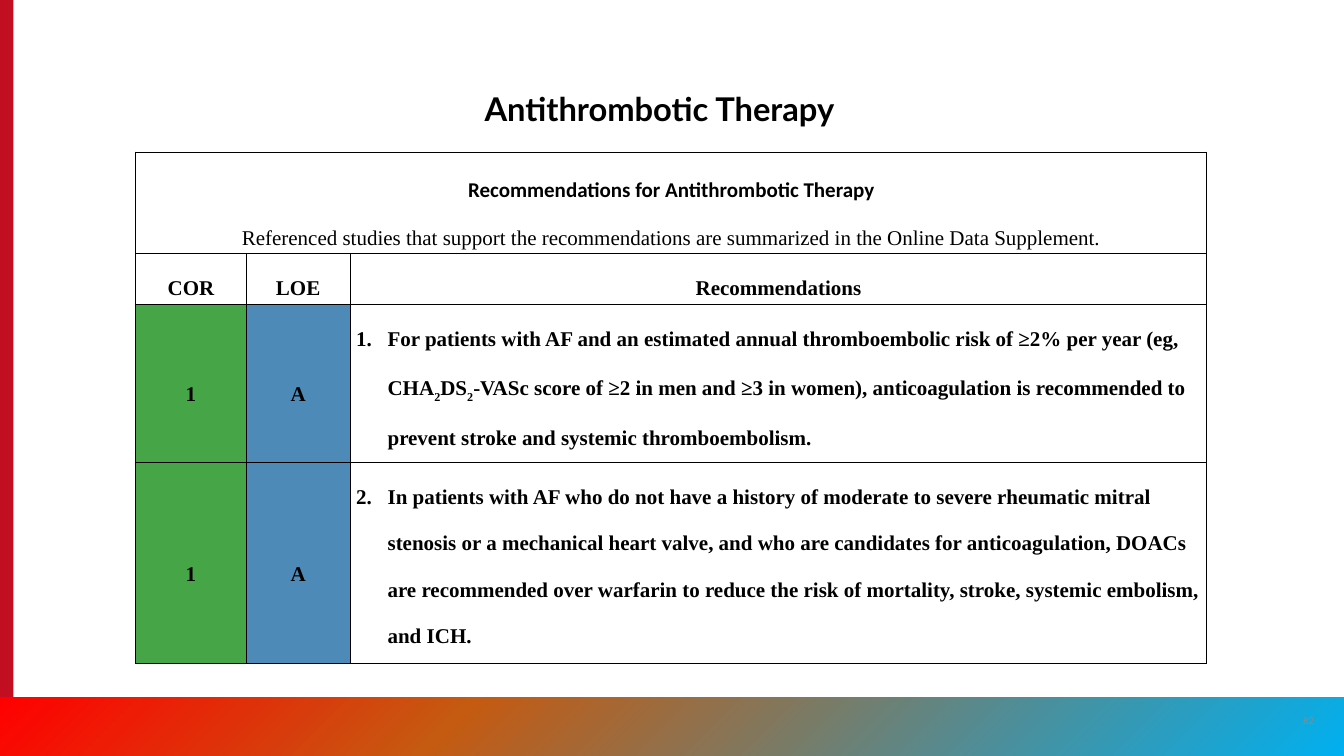
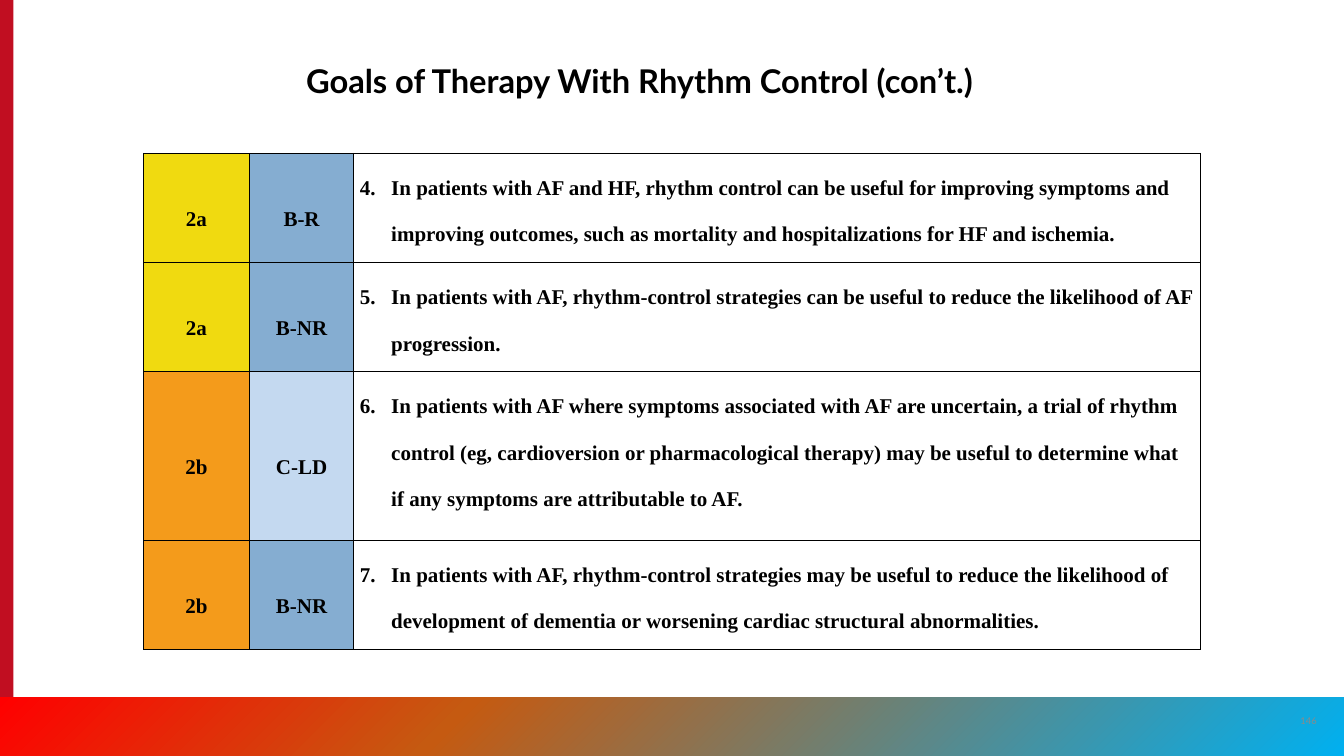
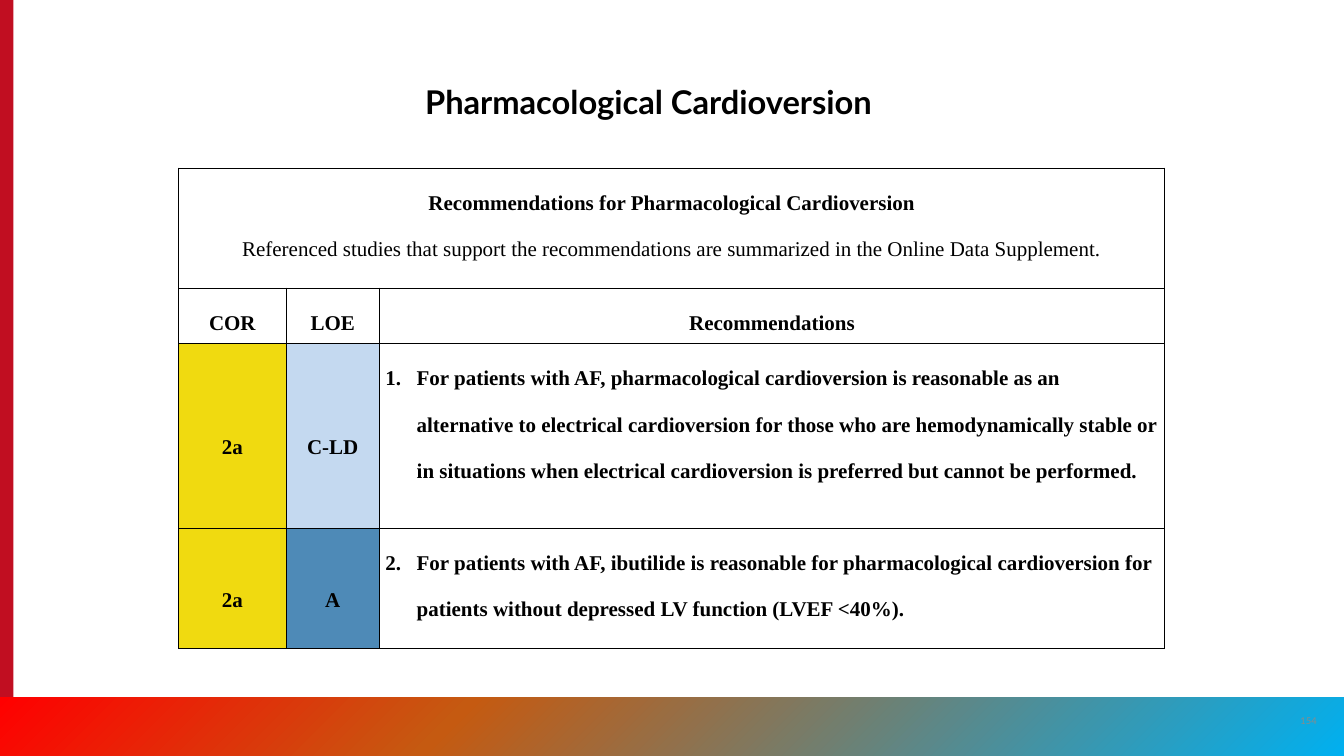
from copy import deepcopy
from dataclasses import dataclass

from lxml.etree import SubElement
from pptx import Presentation
from pptx.dml.color import RGBColor
from pptx.enum.shapes import MSO_SHAPE
from pptx.enum.text import MSO_ANCHOR, MSO_AUTO_SIZE, PP_ALIGN
from pptx.oxml.ns import qn
from pptx.util import Cm, Pt


@dataclass(frozen=True)
class Theme:
    ink: str = "000000"
    grey: str = "8A8B8A"
    stripe: str = "C10E21"
    band: tuple = ((0, "FF0000"), (0.34, "C55A11"), (1, "00B0F0"))
    sans: str = "Lato"
    serif: str = "Times New Roman"
    title: int = 28
    body: int = 18
    small: int = 8


theme = Theme()
GRADES = {
    "1": "45A547", "2a": "F0DA10", "2b": "F49B1B",
    "A": "4E8AB7", "B-R": "85ADD1", "B-NR": "85ADD1", "C-LD": "C4D9F0",
}
NOTE = ("Referenced studies that support the recommendations are "
        "summarized in the Online Data Supplement.")

# Boxes are left, top, width, height in centimetres; "_" encloses subscripts.
SLIDES = [
    dict(
        title="Antithrombotic Therapy", box=(14.4, 1.47, 11.86, 2.54), page="82",
        head="Recommendations for Antithrombotic Therapy", font="Calibri",
        spot=(4.11, 4.6), cols=(3.33, 3.15, 25.9), rows=(3.07, 1.42, 4.75, 5.61),
        start=1,
        items=[
            ("1", "A", "For patients with AF and an estimated annual thromboembolic "
             "risk of ≥2% per year (eg, CHA_2_DS_2_-VASc score of ≥2 in men and ≥3 in "
             "women), anticoagulation is recommended to prevent stroke and systemic "
             "thromboembolism."),
            ("1", "A", "In patients with AF who do not have a history of moderate to "
             "severe rheumatic mitral stenosis or a mechanical heart valve, and who "
             "are candidates for anticoagulation, DOACs are recommended over warfarin "
             "to reduce the risk of mortality, stroke, systemic embolism, and ICH."),
        ],
    ),
    dict(
        title="Goals of Therapy With Rhythm Control (con’t.)",
        box=(9, 1.9, 22.66, 1.27), page="146", head=None,
        spot=(4.34, 4.64), cols=(3.2, 3.16, 25.6), rows=(3.3, 3.3, 5.1, 3.3),
        start=4,
        items=[
            ("2a", "B-R", "In patients with AF and HF, rhythm control can be useful "
             "for improving symptoms and improving outcomes, such as mortality and "
             "hospitalizations for HF and ischemia."),
            ("2a", "B-NR", "In patients with AF, rhythm-control strategies can be "
             "useful to reduce the likelihood of AF progression."),
            ("2b", "C-LD", "In patients with AF where symptoms associated with AF are "
             "uncertain, a trial of rhythm control (eg, cardioversion or "
             "pharmacological therapy) may be useful to determine what if any "
             "symptoms are attributable to AF."),
            ("2b", "B-NR", "In patients with AF, rhythm-control strategies may be "
             "useful to reduce the likelihood of development of dementia or worsening "
             "cardiac structural abnormalities."),
        ],
    ),
    dict(
        title="Pharmacological Cardioversion", box=(12.6, 2.54, 15.44, 1.27),
        page="154", head="Recommendations for Pharmacological Cardioversion",
        font=theme.serif,
        spot=(5.4, 5.08), cols=(3.25, 2.82, 23.75), rows=(3.63, 1.68, 5.59, 3.63),
        start=1,
        items=[
            ("2a", "C-LD", "For patients with AF, pharmacological cardioversion is "
             "reasonable as an alternative to electrical cardioversion for those who "
             "are hemodynamically stable or in situations when electrical "
             "cardioversion is preferred but cannot be performed."),
            ("2a", "A", "For patients with AF, ibutilide is reasonable for "
             "pharmacological cardioversion for patients without depressed LV "
             "function (LVEF <40%)."),
        ],
    ),
]


def style(para, size, font, color=theme.ink, bold=True):
    for run in para.runs:
        run.font.size = Pt(size)
        run.font.name = font
        run.font.bold = bold
        run.font.color.rgb = RGBColor.from_string(color)


def fill_cell(cell, text, font=theme.serif, start=None):
    """Write and border a cell; a start number makes it a numbered item."""
    cell.margin_left = cell.margin_right = Cm(0.18)
    cell.margin_top = cell.margin_bottom = 0
    props = cell._tc.get_or_add_tcPr()
    for side in ("a:lnL", "a:lnR", "a:lnT", "a:lnB"):
        line = SubElement(props, qn(side), w=str(Pt(1)))
        paint = SubElement(line, qn("a:solidFill"))
        SubElement(paint, qn("a:srgbClr"), val=theme.ink)
    if text in GRADES:
        cell.fill.solid()
        cell.fill.fore_color.rgb = RGBColor.from_string(GRADES[text])
        cell.vertical_anchor = MSO_ANCHOR.MIDDLE
    else:
        cell.fill.background()
    para = cell.text_frame.paragraphs[0]
    if start:
        props = para._p.get_or_add_pPr()
        props.set("marL", str(Cm(0.95)))
        props.set("indent", str(-Cm(0.95)))
        SubElement(props, qn("a:buAutoNum"), type="arabicPeriod", startAt=str(start))
    else:
        para.alignment = PP_ALIGN.CENTER
    para.line_spacing = 2.0
    for i, part in enumerate(text.split("_")):
        run = para.add_run()
        run.text = part
        if i % 2:
            run._r.get_or_add_rPr().set("baseline", "-25000")
    style(para, theme.body, font)


deck = Presentation()
deck.slide_width, deck.slide_height = Cm(40.64), Cm(22.86)
layout = deck.slide_layouts[5]
for holder in list(layout.placeholders):
    if holder.placeholder_format.idx:
        holder.element.getparent().remove(holder.element)

for n, data in enumerate(SLIDES):
    slide = deck.slides.add_slide(layout)

    # The stripe and band are made once and then belong to the layout.
    if n == 0:
        stripe = slide.shapes.add_shape(
            MSO_SHAPE.RECTANGLE, 0, 0, Cm(0.41), Cm(22.86))
        stripe.fill.solid()
        stripe.fill.fore_color.rgb = RGBColor.from_string(theme.stripe)
        band = slide.shapes.add_shape(
            MSO_SHAPE.RECTANGLE, 0, Cm(21.08), Cm(40.64), Cm(1.78))
        band.fill.gradient()
        band.fill.gradient_angle = 315
        stops = band.element.find(".//" + qn("a:gsLst"))
        stops.insert(1, deepcopy(stops[0]))
        for stop, (place, color) in zip(band.fill.gradient_stops, theme.band):
            stop.position = place
            stop.color.rgb = RGBColor.from_string(color)
        for shape in (stripe, band):
            shape.shadow.inherit = False
            shape.line.fill.background()
            layout.shapes.element.append(shape.element)

    title = slide.shapes.title
    title.left, title.top, title.width, title.height = map(Cm, data["box"])
    frame = title.text_frame
    frame.text = data["title"]
    frame.auto_size = MSO_AUTO_SIZE.NONE
    frame.word_wrap = True
    frame.vertical_anchor = MSO_ANCHOR.BOTTOM
    para = frame.paragraphs[0]
    para.alignment = PP_ALIGN.LEFT
    para.line_spacing = 0.9
    style(para, theme.title, theme.sans)

    page = slide.shapes.add_textbox(Cm(38.96), Cm(21.18), Cm(1.22), Cm(1.22))
    frame = page.text_frame
    frame.text = data["page"]
    frame.word_wrap = True
    frame.vertical_anchor = MSO_ANCHOR.MIDDLE
    para = frame.paragraphs[0]
    para.alignment = PP_ALIGN.CENTER
    style(para, theme.small, theme.sans, theme.grey, False)

    cols, rows = data["cols"], data["rows"]
    table = slide.shapes.add_table(
        len(rows), len(cols), *map(Cm, data["spot"]),
        Cm(sum(cols)), Cm(sum(rows))).table
    table.first_row = table.horz_banding = False
    for col, width in zip(table.columns, cols):
        col.width = Cm(width)
    for row, height in zip(table.rows, rows):
        row.height = Cm(height)

    top = 0
    if data["head"]:
        top = 2
        table.cell(0, 0).merge(table.cell(0, 2))
        for c, label in enumerate(("COR", "LOE", "Recommendations")):
            fill_cell(table.cell(0, c), "" if c else data["head"], data["font"])
            fill_cell(table.cell(1, c), label)
        para = table.cell(0, 0).text_frame.add_paragraph()
        para.text = NOTE
        para.alignment = PP_ALIGN.CENTER
        para.line_spacing = 2.0
        style(para, theme.body, theme.serif, bold=False)
    for r, (cor, loe, advice) in enumerate(data["items"]):
        fill_cell(table.cell(top + r, 0), cor)
        fill_cell(table.cell(top + r, 1), loe)
        fill_cell(table.cell(top + r, 2), advice, start=data["start"] + r)

deck.save("out.pptx")
